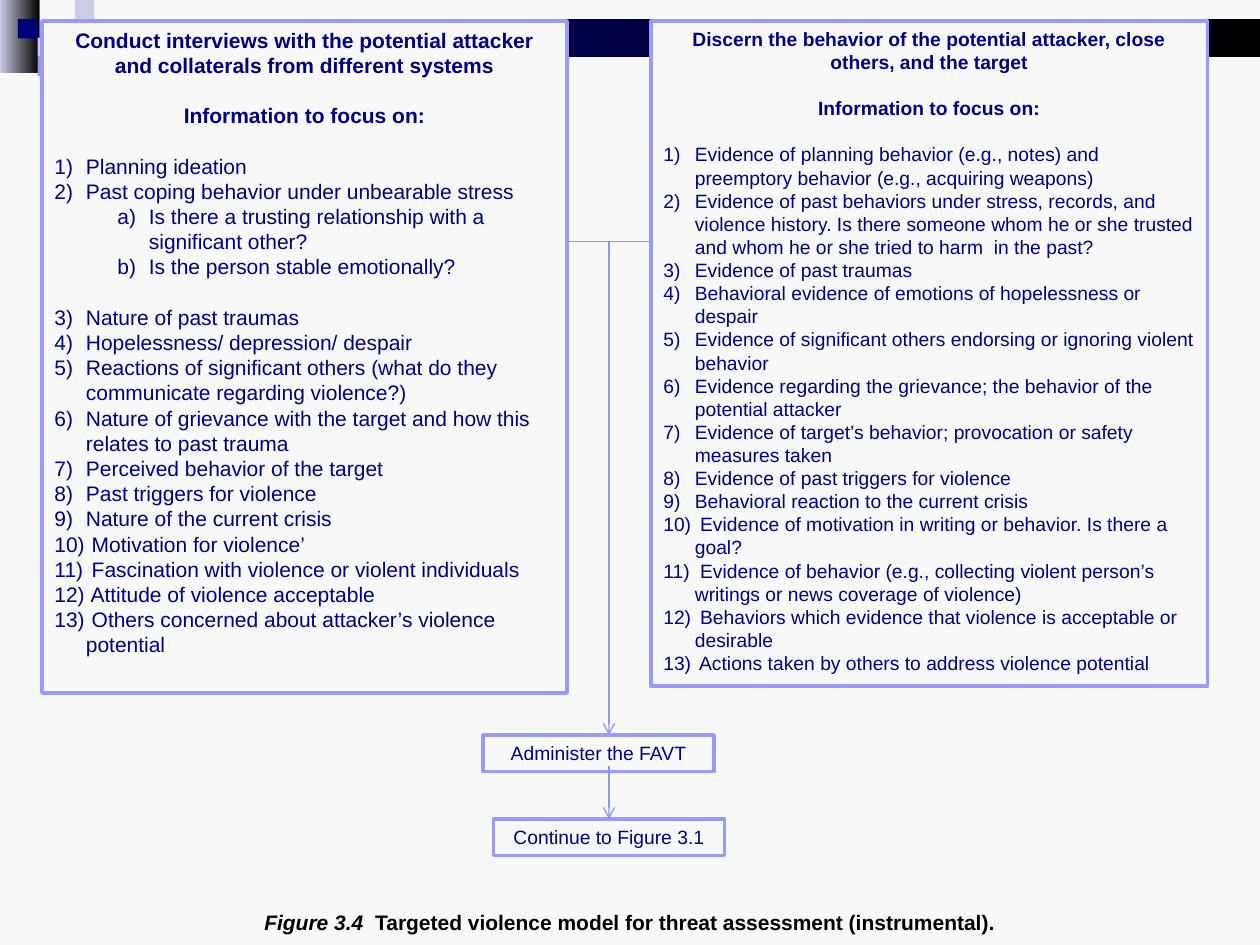
"""Builds the slide showing the targeted violence model for threat assessment."""
from lxml.etree import SubElement
from pptx import Presentation
from pptx.dml.color import RGBColor
from pptx.enum.shapes import MSO_CONNECTOR, MSO_SHAPE
from pptx.enum.text import MSO_ANCHOR, PP_ALIGN
from pptx.oxml.ns import qn
from pptx.util import Pt

NAVY, LILAC, PAPER = "00007D", "9999FF", "F8F8F8"


def color(code):
    return RGBColor.from_string(code)


def write(frame, text, size=11, ink=NAVY, bold=False, italic=False, align=PP_ALIGN.CENTER,
          before=0, numbering=None, indent=0, level=0, same_line=False):
    paragraph = frame.paragraphs[-1]
    if paragraph.runs and not same_line:
        paragraph = frame.add_paragraph()
    paragraph.alignment = align
    paragraph.level = level
    paragraph.line_spacing = Pt(size * 1.2)
    paragraph.space_before = Pt(before)
    if numbering:
        properties = paragraph._p.get_or_add_pPr()
        properties.set("marL", str(Pt(indent)))
        properties.set("indent", str(Pt(-18)))
        SubElement(properties, qn("a:buFont"), typeface="Arial")
        SubElement(properties, qn("a:buAutoNum"), type=numbering)
    run = paragraph.add_run()
    run.text = text
    run.font.name = "Arial"
    run.font.size = Pt(size)
    run.font.bold = bold
    run.font.italic = italic
    run.font.color.rgb = color(ink)


presentation = Presentation()
presentation.slide_width, presentation.slide_height = Pt(720), Pt(540)
slide = presentation.slides.add_slide(presentation.slide_layouts[6])
slide.background.fill.solid()
slide.background.fill.fore_color.rgb = color(PAPER)

decorations = [
    (0, 0, 22.5, 42, ["CCCCE6", "000000"]),
    (32.5, 11, 687.5, 21.5, [NAVY, "000000"]),
    (32.5, 11, 11, 11, ["CCCCE6"]),
    (43, 0, 11, 11, ["CCCCE6"]),
    (43, 11, 11, 11, ["9999CC"]),
    (21.5, 21.5, 11, 11, ["CCCCE6"]),
    (10.3, 11, 11, 11, [NAVY]),
    (21.5, 32.5, 11, 11, ["9999CC"]),
]
for left, top, width, height, tints in decorations:
    block = slide.shapes.add_shape(MSO_SHAPE.RECTANGLE, Pt(left), Pt(top), Pt(width), Pt(height))
    block.shadow.inherit = False
    block.line.fill.background()
    if len(tints) == 1:
        block.fill.solid()
        block.fill.fore_color.rgb = color(tints[0])
    else:
        block.fill.gradient()
        block.fill.gradient_angle = 0
        for stop, tint, position in zip(block.fill.gradient_stops, tints, (0, 1)):
            stop.color.rgb = color(tint)
            stop.position = position

interview_topics = [
    "Planning ideation",
    "Past coping behavior under unbearable stress",
    ["Is there a trusting relationship with a significant other?",
     "Is the person stable emotionally?"],
    "Nature of past traumas",
    "Hopelessness/ depression/ despair",
    "Reactions of significant others (what do they communicate regarding violence?)",
    "Nature of grievance with the target and how this relates to past trauma",
    "Perceived behavior of the target",
    "Past triggers for violence",
    "Nature of the current crisis",
    " Motivation for violence’",
    " Fascination with violence or violent individuals",
    " Attitude of violence acceptable",
    " Others concerned about attacker’s violence potential",
]
behavior_topics = [
    "Evidence of planning behavior (e.g., notes) and preemptory behavior (e.g., acquiring weapons)",
    "Evidence of past behaviors under stress, records, and violence history. Is there someone "
    "whom he or she trusted and whom he or she tried to harm  in the past?",
    "Evidence of past traumas",
    "Behavioral evidence of emotions of hopelessness or despair",
    "Evidence of significant others endorsing or ignoring violent behavior",
    "Evidence regarding the grievance; the behavior of the potential attacker",
    "Evidence of target’s behavior; provocation or safety measures taken",
    "Evidence of past triggers for violence",
    "Behavioral reaction to the current crisis",
    " Evidence of motivation in writing or behavior. Is there a goal?",
    " Evidence of behavior (e.g., collecting violent person’s writings or news coverage of violence)",
    " Behaviors which evidence that violence is acceptable or desirable",
    " Actions taken by others to address violence potential",
]
steps = [
    (24, 12, 300, 384, 12, "Conduct interviews with the potential attacker and collaterals "
     "from different systems", interview_topics),
    (372, 12, 318, 380, 11, "Discern the behavior of the potential attacker, close others, "
     "and the target", behavior_topics),
    (276, 420, 132, 21, 11, "Administer the FAVT", []),
    (282, 468, 132, 21, 11, "Continue to Figure 3.1", []),
]
for left, top, width, height, size, heading, topics in steps:
    step = slide.shapes.add_shape(MSO_SHAPE.RECTANGLE, Pt(left), Pt(top), Pt(width), Pt(height))
    step.shadow.inherit = False
    step.fill.solid()
    step.fill.fore_color.rgb = color(PAPER)
    step.line.color.rgb = color(LILAC)
    step.line.width = Pt(2)
    frame = step.text_frame
    frame.word_wrap = True
    frame.vertical_anchor = MSO_ANCHOR.TOP
    write(frame, heading, size=size, bold=bool(topics))
    blank_line = size * 1.2
    if topics:
        write(frame, "Information to focus on:", size=size, bold=True, before=blank_line)
    gap = blank_line
    for topic in topics:
        if isinstance(topic, list):
            for question in topic:
                write(frame, question, size=size, align=PP_ALIGN.LEFT,
                      numbering="alphaLcParenR", indent=54, level=1)
            gap = blank_line
        else:
            write(frame, topic, size=size, align=PP_ALIGN.LEFT, before=gap,
                  numbering="arabicParenR", indent=18)
            gap = 0

caption = slide.shapes.add_textbox(Pt(0), Pt(516), Pt(720), Pt(21.6)).text_frame
caption.word_wrap = True
write(caption, "Figure 3.4 ", size=12, ink="000000", bold=True, italic=True)
write(caption, " Targeted violence model for threat assessment (instrumental).",
      size=12, ink="000000", bold=True, same_line=True)

links = [
    (324, 138, 372, 138, False),
    (348, 138, 348, 420, True),
    (348, 438, 348, 468, True),
]
for start_x, start_y, end_x, end_y, has_arrow in links:
    link = slide.shapes.add_connector(MSO_CONNECTOR.STRAIGHT, Pt(start_x), Pt(start_y),
                                      Pt(end_x), Pt(end_y))
    link.line.color.rgb = color("9393FC")
    link.line.width = Pt(0.75)
    properties = link.element.spPr
    if has_arrow:
        SubElement(properties.find(qn("a:ln")), qn("a:tailEnd"), type="arrow")
    SubElement(properties, qn("a:effectLst"))

presentation.save("out.pptx")
